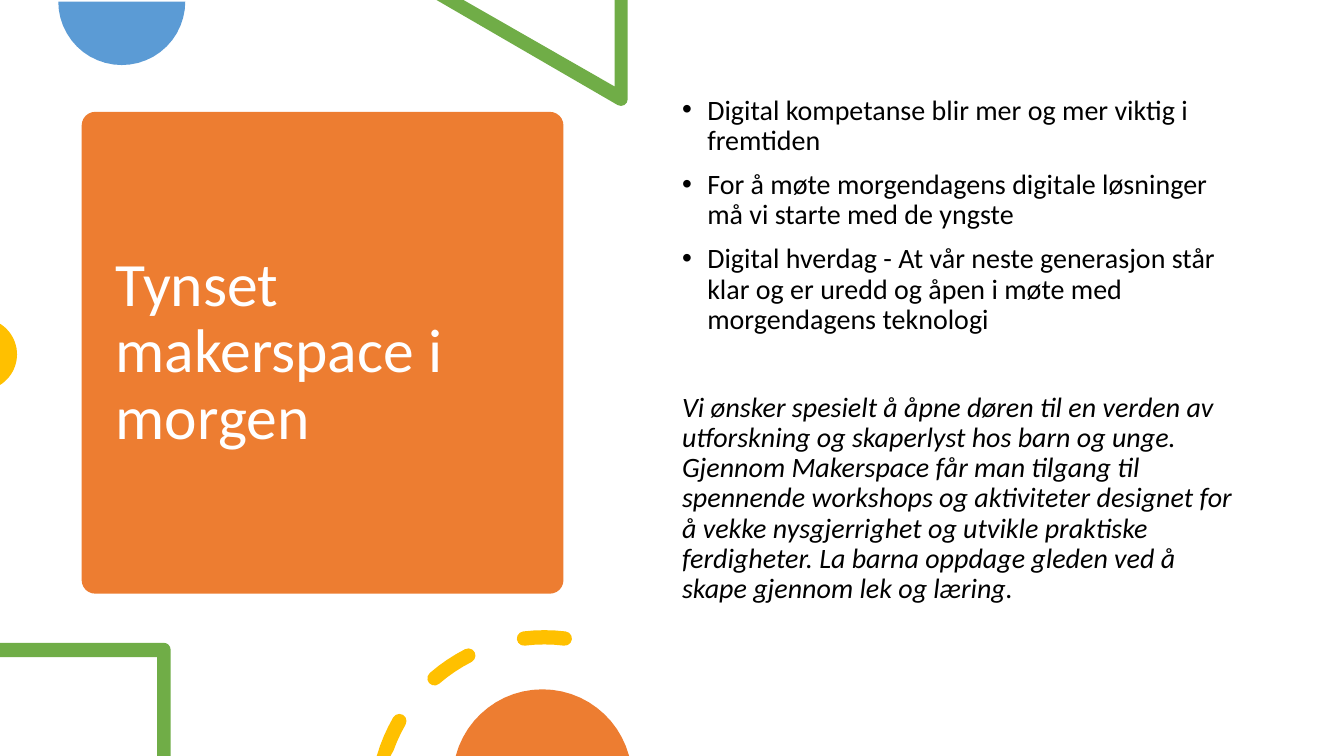
import math
import pptx
import pptx.util
import pptx.dml.color
import pptx.enum.shapes
import pptx.enum.text
from pptx.util import Cm, Pt

TITLE = "Tynset makerspace i morgen"
BULLETS = [
    "Digital kompetanse blir mer og mer viktig i fremtiden",
    "For å møte morgendagens digitale løsninger må vi starte med de yngste",
    "Digital hverdag - At vår neste generasjon står klar og er uredd og åpen i møte med morgendagens teknologi",
]
CLOSING = (
    "Vi ønsker spesielt å åpne døren til en verden av utforskning og skaperlyst hos barn og unge. "
    "Gjennom Makerspace får man tilgang til spennende workshops og aktiviteter designet for å vekke "
    "nysgjerrighet og utvikle praktiske ferdigheter. La barna oppdage gleden ved å skape gjennom lek og læring."
)
COLORS = {
    "orange": "ED7D31", "blue": "5B9BD5", "green": "70AD47",
    "yellow": "FFC000", "white": "FFFFFF", "black": "000000",
}
FONT = "Calibri"
WIDTH, HEIGHT = 33.87, 19.05
CARD = (2.06, 2.82, 12.14, 12.14)
TITLE_BOX = (2.67, 3.1, 10.95, 11.58)
BODY_BOX = (16.94, 2.29, 14.6, 13.59)
BLUE_DISC = (3.07, 0.04, 1.6, 180, 360)
YELLOW_DISC = (-0.48, 8.93, 0.91, -58, 58)
ORANGE_DISC = (13.67, 19.63, 2.26, 15, 165)
RING = (13.72, 20.28, 4.22)
DASH_HALF = 0.18
DASHES = [(83, 97), (117, 131), (150, 163.7)]
CORNER = 0.17


def rgb(name):
    return pptx.dml.color.RGBColor.from_string(COLORS[name])


def arc(cx, cy, r, start, end, steps=24):
    angles = [math.radians(start + (end - start) * i / steps) for i in range(steps + 1)]
    return [(cx + r * math.cos(a), cy - r * math.sin(a)) for a in angles]


def dash(start, end):
    cx, cy, r = RING
    first, last = arc(cx, cy, r, start, end, 1)
    return (arc(cx, cy, r + DASH_HALF, start, end, 4)
            + arc(*last, DASH_HALF, end, end + 180, 6)
            + arc(cx, cy, r - DASH_HALF, end, start, 4)
            + arc(*first, DASH_HALF, start + 180, start + 360, 6))


def paint(s, color):
    s.shadow.inherit = False
    s.fill.solid()
    s.fill.fore_color.rgb = rgb(color)
    s.line.fill.background()


def add_outline(shapes, contours, color):
    builder = None
    for contour in contours:
        points = [(Cm(min(max(x, 0), WIDTH)), Cm(min(max(y, 0), HEIGHT))) for x, y in contour]
        if builder is None:
            builder = shapes.build_freeform(*points[0], scale=1.0)
        else:
            builder.move_to(*points[0])
        builder.add_line_segments(points[1:], close=True)
    paint(builder.convert_to_shape(), color)


def add_text(tf, text, size=20, color="black", italic=False, bullet=False, before=10):
    p = tf.paragraphs[0] if not tf.text else tf.add_paragraph()
    p.line_spacing = 0.9
    p.space_before = Pt(before)
    if bullet:
        pPr = p._p.get_or_add_pPr()
        pPr.set("marL", str(Cm(0.635)))
        pPr.set("indent", str(-Cm(0.635)))
        for tag, key, value in (("a:buFont", "typeface", "Arial"), ("a:buChar", "char", "•")):
            pPr.append(pptx.oxml.xmlchemy.OxmlElement(tag))
            pPr[-1].set(key, value)
    r = p.add_run()
    r.text = text
    r.font.size = Pt(size)
    r.font.name = FONT
    r.font.italic = italic
    r.font.color.rgb = rgb(color)


def add_box(shapes, box, anchor):
    tf = shapes.add_textbox(*map(Cm, box)).text_frame
    tf.word_wrap = True
    tf.vertical_anchor = anchor
    return tf


def main():
    prs = pptx.Presentation()
    prs.slide_width, prs.slide_height = Cm(WIDTH), Cm(HEIGHT)
    shapes = prs.slides.add_slide(prs.slide_layouts[6]).shapes

    card = shapes.add_shape(pptx.enum.shapes.MSO_SHAPE.ROUNDED_RECTANGLE, *map(Cm, CARD))
    card.adjustments[0] = 0.028
    paint(card, "orange")
    tf = add_box(shapes, TITLE_BOX, pptx.enum.text.MSO_ANCHOR.MIDDLE)
    add_text(tf, TITLE, size=44, color="white", before=0)

    triangle = ([(15.82, 0), (15.49, 0), (15.49, 2.18), (11.68, 0), (11, 0)]
                + arc(15.65, 2.5, CORNER, 240, 360, 4))
    frame = ([(0, 16.2), (0, 16.56), (3.96, 16.56), (3.96, HEIGHT), (4.3, HEIGHT)]
             + arc(4.13, 16.37, CORNER, 0, 90, 4))
    add_outline(shapes, [arc(*BLUE_DISC)], "blue")
    add_outline(shapes, [triangle], "green")
    add_outline(shapes, [arc(*YELLOW_DISC)], "yellow")

    tf = add_box(shapes, BODY_BOX, pptx.enum.text.MSO_ANCHOR.TOP)
    for text in BULLETS:
        add_text(tf, text, bullet=True)
    add_text(tf, CLOSING, italic=True, before=41)

    add_outline(shapes, [frame], "green")
    add_outline(shapes, [dash(*span) for span in DASHES], "yellow")
    add_outline(shapes, [arc(*ORANGE_DISC)], "orange")
    prs.save("out.pptx")


if __name__ == "__main__":
    main()
